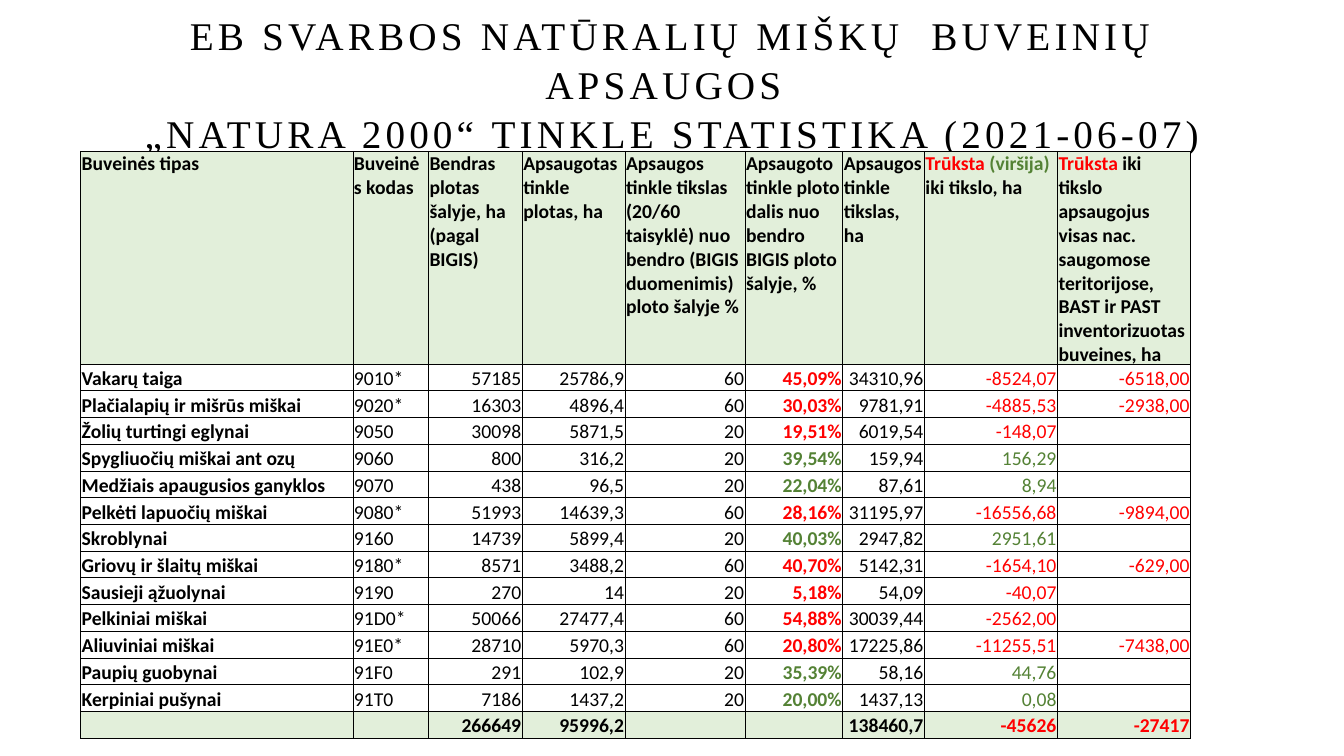
from dataclasses import dataclass

from lxml import etree
from pptx import Presentation
from pptx import util as u
from pptx.dml import color
from pptx.enum import text
from pptx.oxml import ns

HUES = {"ink": "000000", "red": "FF0000", "green": "548235", "pale": "E2EFDA"}
WIDTHS = [2.7, 0.75, 0.93, 1.02, 1.19, 0.97, 0.81, 1.32, 1.32]
HEAD = 1.9
BODY = 3.71
SHARE, LACK, LAST = 5, 7, 8


@dataclass
class Part:
    words: str
    hue: str = "ink"


@dataclass
class Row:
    cells: list[str]


TITLE = ("EB SVARBOS NATŪRALIŲ MIŠKŲ  BUVEINIŲ APSAUGOS \v"
         "„NATURA 2000“ TINKLE STATISTIKA (2021-06-07)")
HEADS = [
    [Part("Buveinės tipas")],
    [Part("Buveinės kodas")],
    [Part("Bendras plotas šalyje, ha (pagal BIGIS)")],
    [Part("Apsaugotas tinkle plotas, ha")],
    [Part("Apsaugos tinkle tikslas (20/60 taisyklė) nuo bendro "
          "(BIGIS duomenimis) ploto šalyje %")],
    [Part("Apsaugoto tinkle ploto dalis nuo bendro BIGIS ploto šalyje, %")],
    [Part("Apsaugos tinkle tikslas, ha")],
    [Part("Trūksta ", "red"), Part("(viršija)", "green"), Part(" iki tikslo, ha")],
    [Part("Trūksta", "red"),
     Part(" iki tikslo apsaugojus visas nac. saugomose teritorijose, "
          "BAST ir PAST inventorizuotas buveines, ha")],
]
ROWS = [
    Row(["Vakarų taiga", "9010*", "57185", "25786,9", "60", "45,09%", "34310,96", "-8524,07", "-6518,00"]),
    Row(["Plačialapių ir mišrūs miškai", "9020*", "16303", "4896,4", "60", "30,03%", "9781,91", "-4885,53", "-2938,00"]),
    Row(["Žolių turtingi eglynai", "9050", "30098", "5871,5", "20", "19,51%", "6019,54", "-148,07", ""]),
    Row(["Spygliuočių miškai ant ozų", "9060", "800", "316,2", "20", "39,54%", "159,94", "156,29", ""]),
    Row(["Medžiais apaugusios ganyklos", "9070", "438", "96,5", "20", "22,04%", "87,61", "8,94", ""]),
    Row(["Pelkėti lapuočių miškai", "9080*", "51993", "14639,3", "60", "28,16%", "31195,97", "-16556,68", "-9894,00"]),
    Row(["Skroblynai", "9160", "14739", "5899,4", "20", "40,03%", "2947,82", "2951,61", ""]),
    Row(["Griovų ir šlaitų miškai", "9180*", "8571", "3488,2", "60", "40,70%", "5142,31", "-1654,10", "-629,00"]),
    Row(["Sausieji ąžuolynai", "9190", "270", "14", "20", "5,18%", "54,09", "-40,07", ""]),
    Row(["Pelkiniai miškai", "91D0*", "50066", "27477,4", "60", "54,88%", "30039,44", "-2562,00", ""]),
    Row(["Aliuviniai miškai", "91E0*", "28710", "5970,3", "60", "20,80%", "17225,86", "-11255,51", "-7438,00"]),
    Row(["Paupių guobynai", "91F0", "291", "102,9", "20", "35,39%", "58,16", "44,76", ""]),
    Row(["Kerpiniai pušynai", "91T0", "7186", "1437,2", "20", "20,00%", "1437,13", "0,08", ""]),
    Row(["", "", "266649", "95996,2", "", "", "138460,7", "-45626", "-27417"]),
]


def tint(name: str) -> color.RGBColor:
    return color.RGBColor.from_string(HUES[name])


def style(para, face: str, size: float, hue: str, bold: bool) -> None:
    font = para.font
    font.name, font.size, font.bold = face, u.Pt(size), bold
    font.color.rgb = tint(hue)


def frame(cell) -> None:
    props = cell._tc.get_or_add_tcPr()
    for side in ("lnL", "lnR", "lnT", "lnB"):
        line = etree.SubElement(props, ns.qn(f"a:{side}"), w=str(u.Pt(0.5)))
        fill = etree.SubElement(line, ns.qn("a:solidFill"))
        etree.SubElement(fill, ns.qn("a:srgbClr"), val=HUES["ink"])


def write(cell, parts: list[Part], bold: bool, shade: bool, right: bool, low: bool) -> None:
    frame(cell)
    cell.margin_left = cell.margin_right = cell.margin_top = u.Inches(0.01)
    cell.margin_bottom = 0
    cell.vertical_anchor = text.MSO_ANCHOR.BOTTOM if low else text.MSO_ANCHOR.TOP
    if shade:
        cell.fill.solid()
        cell.fill.fore_color.rgb = tint("pale")
    else:
        cell.fill.background()
    para = cell.text_frame.paragraphs[0]
    para.alignment = text.PP_ALIGN.RIGHT if right else text.PP_ALIGN.LEFT
    style(para, "Calibri", 14, parts[0].hue if len(parts) == 1 else "ink", bold)
    for part in parts:
        if part.words:
            run = para.add_run()
            run.text = part.words
            if len(parts) > 1:
                run.font.color.rgb = tint(part.hue)
        else:
            para._p.get_or_add_endParaRPr().set("sz", "1400")


def pick(row: Row, col: int) -> str:
    if col not in (SHARE, LACK, LAST):
        return "ink"
    return "red" if row.cells[LACK].startswith("-") else "green"


def head(slide) -> None:
    box = slide.shapes.add_textbox(u.Inches(0.92), u.Inches(0.61), u.Inches(11.5), u.Inches(0.89))
    body = box.text_frame
    body.word_wrap = True
    body.vertical_anchor = text.MSO_ANCHOR.MIDDLE
    body.margin_bottom = u.Inches(0.52)
    para = body.paragraphs[0]
    para.text = TITLE
    para.alignment = text.PP_ALIGN.CENTER
    para.line_spacing = 1.04
    style(para, "Times New Roman", 28, "ink", False)
    for run in para.runs:
        run._r.get_or_add_rPr().set("spc", "300")


def grid(slide) -> None:
    table = slide.shapes.add_table(
        len(ROWS) + 1, len(WIDTHS), u.Inches(0.8), u.Inches(1.5),
        u.Inches(sum(WIDTHS)), u.Inches(HEAD + BODY)).table
    table.first_row = table.horz_banding = False
    for col, width in enumerate(WIDTHS):
        table.columns[col].width = u.Inches(width)
        write(table.cell(0, col), HEADS[col], True, True, False, False)
    table.rows[0].height = u.Inches(HEAD)
    for num, row in enumerate(ROWS, 1):
        table.rows[num].height = u.Inches(BODY / len(ROWS))
        total = num == len(ROWS)
        for col, words in enumerate(row.cells):
            bold = total or col in (0, SHARE)
            write(table.cell(num, col), [Part(words, pick(row, col))], bold, total, col > 1, True)


def main() -> None:
    deck = Presentation()
    deck.slide_width, deck.slide_height = u.Inches(13.33), u.Inches(7.5)
    slide = deck.slides.add_slide(deck.slide_layouts[6])
    head(slide)
    grid(slide)
    deck.save("out.pptx")


if __name__ == "__main__":
    main()
